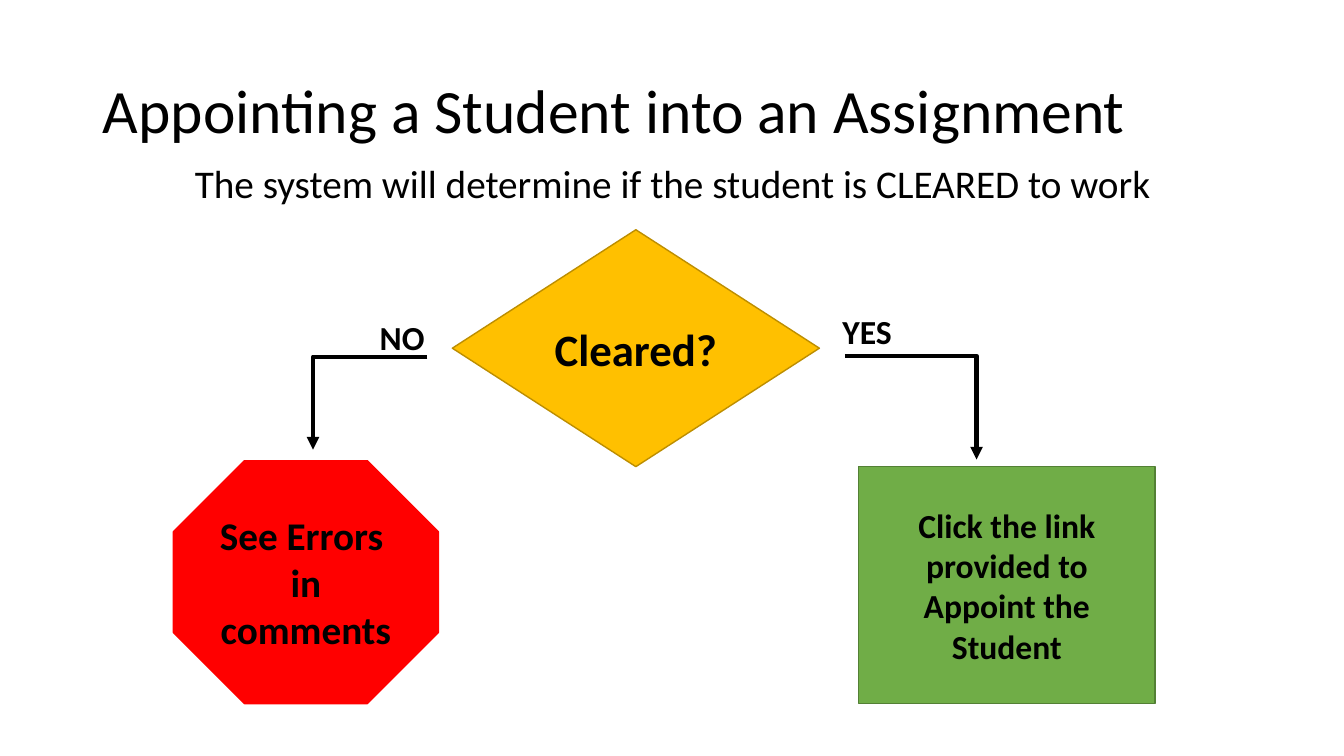
from dataclasses import dataclass

from lxml import etree
from pptx import Presentation
from pptx.dml.color import RGBColor
from pptx.enum.shapes import MSO_CONNECTOR, MSO_SHAPE
from pptx.enum.text import MSO_ANCHOR, MSO_AUTO_SIZE, PP_ALIGN
from pptx.oxml.ns import qn
from pptx.slide import Slide
from pptx.text.text import TextFrame
from pptx.util import Cm, Pt

DECISION = MSO_SHAPE.FLOWCHART_DECISION
PROCESS = MSO_SHAPE.FLOWCHART_PROCESS
OCTAGON = MSO_SHAPE.OCTAGON
ELBOW = MSO_CONNECTOR.ELBOW
LEFT, CENTER = PP_ALIGN.LEFT, PP_ALIGN.CENTER
TOP, MIDDLE = MSO_ANCHOR.TOP, MSO_ANCHOR.MIDDLE
NO_FIT = MSO_AUTO_SIZE.NONE


@dataclass(frozen=True)
class Theme:
    font: str = "Calibri"
    ink: str = "000000"
    amber: str = "FFC000"
    amber_line: str = "BD8E00"
    green: str = "70AD47"
    green_line: str = "538035"
    red: str = "FF0000"
    title: int = 44
    decision: int = 32
    body: int = 28
    label: int = 24
    outline: int = 1
    arrow: int = 3


@dataclass(frozen=True)
class Box:
    left: float
    top: float
    width: float
    height: float

    def lengths(self) -> tuple[Cm, Cm, Cm, Cm]:
        return Cm(self.left), Cm(self.top), Cm(self.width), Cm(self.height)


@dataclass(frozen=True)
class Node:
    kind: MSO_SHAPE
    box: Box
    text: str
    size: int
    fill: str
    line: str


@dataclass(frozen=True)
class Branch:
    label: str
    label_box: Box
    start: tuple[float, float]
    end: tuple[float, float]


THEME = Theme()
TITLE_BOX = Box(2.34, 1.02, 29.21, 3.68)
BODY_BOX = Box(2.34, 4.01, 29.21, 1.63)
NODES = (
    Node(DECISION, Box(11.4, 5.79, 9.25, 5.97), "Cleared?",
         THEME.decision, THEME.amber, THEME.amber_line),
    Node(PROCESS, Box(21.64, 11.76, 7.47, 5.97),
         "Click the link provided to Appoint the Student",
         THEME.label, THEME.green, THEME.green_line),
    Node(OCTAGON, Box(4.37, 11.61, 6.68, 6.12), "See Errors \nin comments",
         THEME.body, THEME.red, THEME.red),
)
BRANCHES = (
    Branch("NO", Box(9.32, 7.87, 1.73, 1.27), (10.77, 8.99), (7.89, 11.33)),
    Branch("YES", Box(20.98, 7.7, 1.98, 1.27), (21.29, 8.97), (24.61, 11.58)),
)


def write(tf: TextFrame, text: str, size: int, align: PP_ALIGN,
          anchor: MSO_ANCHOR, bold: bool = True) -> None:
    tf.text = text
    tf.word_wrap = True
    tf.auto_size = NO_FIT
    tf.vertical_anchor = anchor
    for p in tf.paragraphs:
        p.alignment = align
        for r in p.runs:
            r.font.name = THEME.font
            r.font.size = Pt(size)
            r.font.bold = bold
            r.font.color.rgb = RGBColor.from_string(THEME.ink)


def fill_placeholder(s: Slide, idx: int, box: Box, text: str, size: int,
                     align: PP_ALIGN, anchor: MSO_ANCHOR) -> None:
    sp = s.placeholders[idx]
    sp.left, sp.top, sp.width, sp.height = box.lengths()
    write(sp.text_frame, text, size, align, anchor, bold=False)
    p = sp.text_frame.paragraphs[0]
    p.line_spacing = 0.9
    if idx:
        p.space_before = Pt(10)
        pPr = p._p.get_or_add_pPr()
        pPr.set("marL", "0")
        pPr.set("indent", "0")
        etree.SubElement(pPr, qn("a:buNone"))


def draw_node(s: Slide, node: Node) -> None:
    sp = s.shapes.add_shape(node.kind, *node.box.lengths())
    sp.shadow.inherit = False
    sp.fill.solid()
    sp.fill.fore_color.rgb = RGBColor.from_string(node.fill)
    sp.line.color.rgb = RGBColor.from_string(node.line)
    sp.line.width = Pt(THEME.outline)
    write(sp.text_frame, node.text, node.size, CENTER, MIDDLE)


def draw_branch(s: Slide, branch: Branch) -> None:
    points = (Cm(v) for v in branch.start + branch.end)
    arrow = s.shapes.add_connector(ELBOW, *points)
    arrow.line.color.rgb = RGBColor.from_string(THEME.ink)
    arrow.line.width = Pt(THEME.arrow)
    etree.SubElement(arrow.line._get_or_add_ln(), qn("a:tailEnd"), type="triangle")
    spPr = arrow._element.spPr
    etree.SubElement(spPr, qn("a:effectLst"))
    guides = spPr.find(qn("a:prstGeom")).find(qn("a:avLst"))
    etree.SubElement(guides, qn("a:gd"), name="adj1", fmla="val 100000")

    sp = s.shapes.add_textbox(*branch.label_box.lengths())
    write(sp.text_frame, branch.label, THEME.label, LEFT, TOP)


def main() -> None:
    prs = Presentation()
    prs.slide_width, prs.slide_height = Cm(33.87), Cm(19.05)
    s = prs.slides.add_slide(prs.slide_layouts[1])
    fill_placeholder(s, 0, TITLE_BOX, "Appointing a Student into an Assignment",
                     THEME.title, LEFT, MIDDLE)
    fill_placeholder(s, 1, BODY_BOX,
                     "The system will determine if the student is CLEARED to work",
                     THEME.body, CENTER, TOP)
    for node in NODES:
        draw_node(s, node)
    for branch in BRANCHES:
        draw_branch(s, branch)
    prs.save("out.pptx")


if __name__ == "__main__":
    main()
